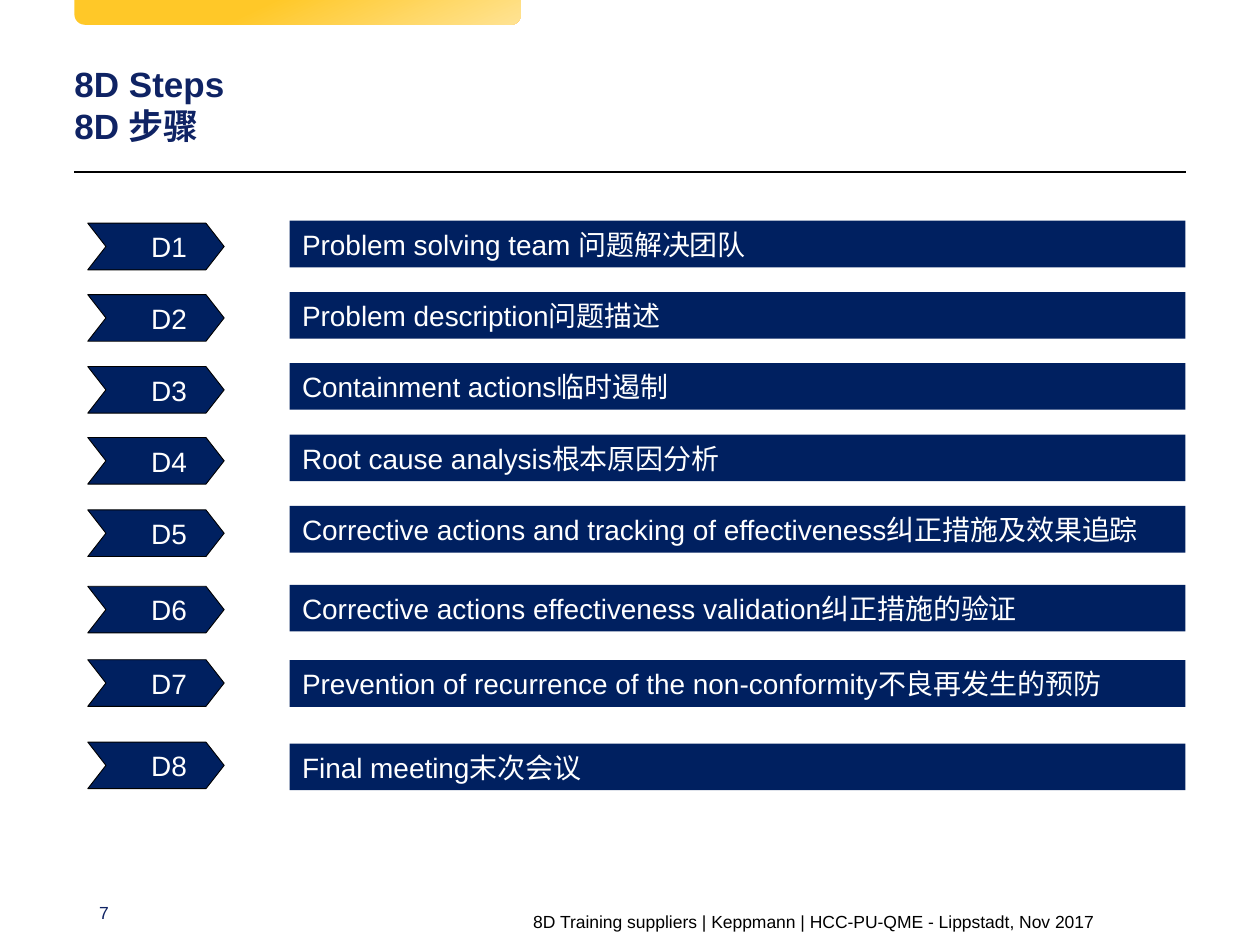
from lxml import etree
from pptx import Presentation
from pptx import util as u
from pptx.dml import color
from pptx.enum import shapes, text
from pptx.oxml import ns

NAVY, TITLE_BLUE, BLACK, WHITE = "002060", "0F2364", "000000", "FFFFFF"
LEFT, WIDTH = 1.5, 22.4
ROW_HEIGHT = 0.94
STEPS = [
    ("Problem solving team 问题解决团队", 4.45, 4.5),
    ("Problem description问题描述", 5.89, 5.94),
    ("Containment actions临时遏制", 7.32, 7.39),
    ("Root cause analysis根本原因分析", 8.76, 8.82),
    ("Corrective actions and tracking of effectiveness纠正措施及效果追踪", 10.2, 10.28),
    ("Corrective actions effectiveness validation纠正措施的验证", 11.79, 11.82),
    ("Prevention of recurrence of the non-conformity不良再发生的预防", 13.31, 13.3),
    ("Final meeting末次会议", 14.99, 14.96),
]


def rgb(value):
    """Turn a hex string into a colour."""
    return color.RGBColor.from_string(value)


def box_lengths(box):
    """Turn left, top, width and height in centimetres into lengths."""
    return [u.Cm(value) for value in box]


def write(shape, wording, size, colour, bold=False, insets=None):
    """Write one paragraph into a shape, format it and return it."""
    frame = shape.text_frame
    frame.word_wrap = True
    if insets:
        (frame.margin_left, frame.margin_top,
         frame.margin_right, frame.margin_bottom) = box_lengths(insets)
    paragraph = frame.paragraphs[0]
    paragraph.text = wording
    paragraph.alignment = text.PP_ALIGN.LEFT
    for run in paragraph.runs:
        run.font.name = "Arial"
        run.font.size = u.Pt(size)
        run.font.bold = bold
        run.font.color.rgb = rgb(colour)
    return paragraph


def add_block(slide, kind, box, fill, line=None):
    """Add a flat preset shape with an optional thin outline."""
    shape = slide.shapes.add_shape(kind, *box_lengths(box))
    shape.shadow.inherit = False
    shape.fill.solid()
    shape.fill.fore_color.rgb = rgb(fill)
    if line:
        shape.line.color.rgb = rgb(line)
        shape.line.width = u.Pt(0.5)
    else:
        shape.line.fill.background()
    shape.text_frame.vertical_anchor = text.MSO_ANCHOR.MIDDLE
    return shape


def add_tab(slide, box):
    """Add the yellow tab at the top edge."""
    tab = add_block(slide, shapes.MSO_SHAPE.ROUND_2_SAME_RECTANGLE, box, "FFC828")
    tab.adjustments[0] = 0
    tab.adjustments[1] = 0.42
    tab.fill.gradient()
    tab.fill.gradient_angle = 295
    stops = [(0.4, "FFC828"), (1, "FFE393")]
    for stop, (position, colour) in zip(tab.fill.gradient_stops, stops):
        stop.position = position
        stop.color.rgb = rgb(colour)


def add_header(slide, box):
    """Place the title in the box and a rule along its lower edge."""
    left, top, width, height = box
    title = slide.shapes.title
    title.left, title.top, title.width, title.height = box_lengths(box)
    title.text_frame.vertical_anchor = text.MSO_ANCHOR.TOP
    title.text_frame.auto_size = text.MSO_AUTO_SIZE.NONE
    write(title, "8D Steps\n8D 步骤", 20, TITLE_BLUE, True, (0, 0.25, 0, 0))
    ends = box_lengths((left, top + height, left + width, top + height))
    rule = slide.shapes.add_connector(shapes.MSO_CONNECTOR.STRAIGHT, *ends)
    rule.line.color.rgb = rgb(BLACK)
    rule.line.width = u.Pt(1)
    etree.SubElement(rule._element.spPr, ns.qn("a:effectLst"))


def add_step(slide, number, wording, bar_top, chevron_top, left, width):
    """Add one numbered chevron and the bar that names its step."""
    chevron = add_block(slide, shapes.MSO_SHAPE.CHEVRON,
                        (left + 0.27, chevron_top, 2.75, ROW_HEIGHT), NAVY, BLACK)
    chevron.adjustments[0] = 0.39
    label = write(chevron, f"D{number}", 16, WHITE, insets=(0, 0, 0, 0))
    label.alignment = text.PP_ALIGN.CENTER
    label._p.get_or_add_pPr().set("marL", str(u.Cm(0.53)))
    bar = add_block(slide, shapes.MSO_SHAPE.RECTANGLE,
                    (left + 4.34, bar_top, width - 4.34, ROW_HEIGHT), NAVY)
    write(bar, wording, 16, WHITE)


def add_footer(slide, left, top):
    """Add the slide number and the footer line."""
    number = slide.shapes.add_textbox(*box_lengths((left, top, 2.95, 0.56)))
    write(number, "7", 10, TITLE_BLUE, insets=(0.5, 0, 0, 0))
    footer = slide.shapes.add_textbox(*box_lengths((left + 9, top + 0.05, 12.1, 0.8)))
    write(footer, "8D Training suppliers | Keppmann | HCC-PU-QME - Lippstadt, Nov 2017",
          10, BLACK)


def main():
    """Build the slide and save it."""
    presentation = Presentation()
    presentation.slide_width = u.Cm(25.4)
    presentation.slide_height = u.Cm(19.05)
    slide = presentation.slides.add_slide(presentation.slide_layouts[5])
    add_tab(slide, (LEFT, 0, 9, 0.5))
    add_header(slide, (LEFT, 1, WIDTH, 2.46))
    for number, (wording, bar_top, chevron_top) in enumerate(STEPS, 1):
        add_step(slide, number, wording, bar_top, chevron_top, LEFT, WIDTH)
    add_footer(slide, LEFT, 18.19)
    presentation.save("out.pptx")


if __name__ == "__main__":
    main()
